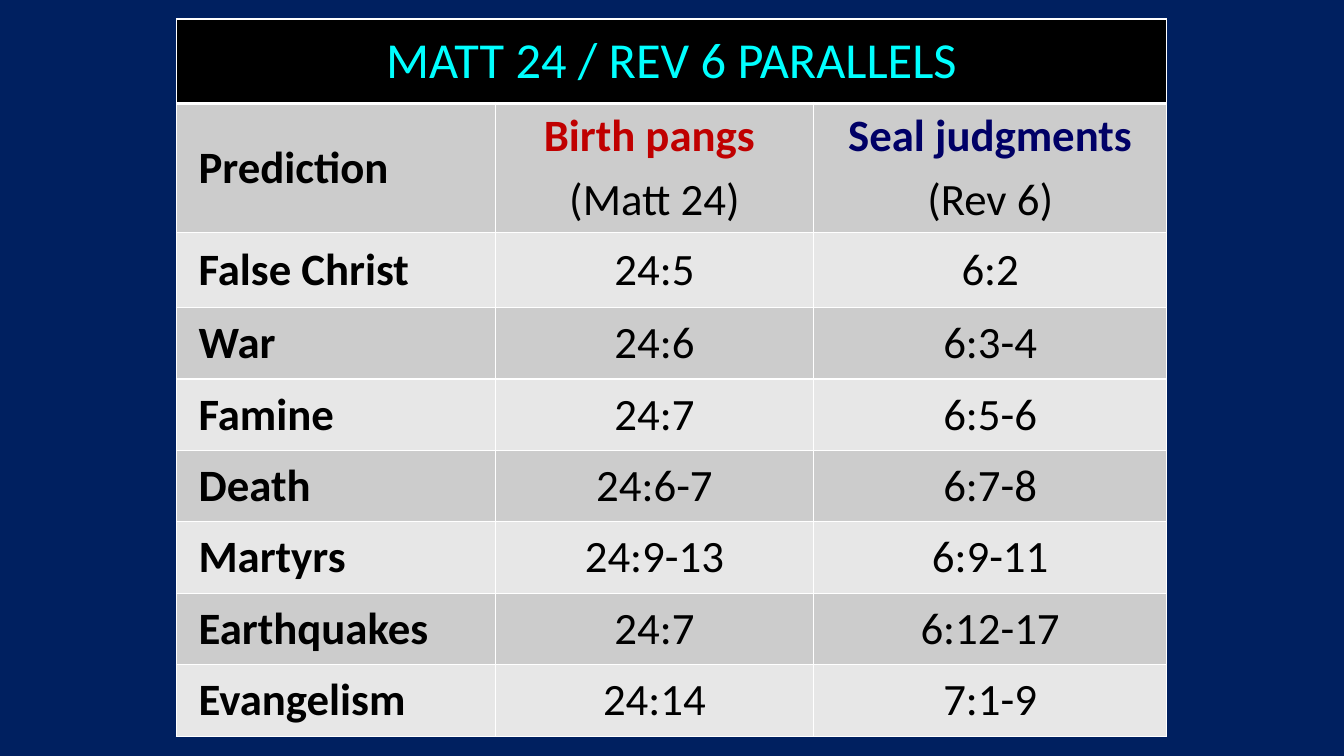
from lxml import etree
from pptx import Presentation
from pptx.dml.color import RGBColor
from pptx.enum.text import MSO_ANCHOR, PP_ALIGN
from pptx.oxml.ns import qn
from pptx.util import Cm, Pt

LEFT, CENTER = PP_ALIGN.LEFT, PP_ALIGN.CENTER
MIDDLE = MSO_ANCHOR.MIDDLE

TITLE = "MATT 24 / REV 6 PARALLELS"
HEADINGS = [
    [("Prediction", "000000")],
    [("Birth pangs ", "C00000"), ("(Matt 24)", "000000")],
    [("Seal judgments", "000066"), ("(Rev 6)", "000000")],
]
PARALLELS = [
    ("False Christ", "24:5", "6:2"),
    ("War", "24:6", "6:3-4"),
    ("Famine", "24:7", "6:5-6"),
    ("Death", "24:6-7", "6:7-8"),
    ("Martyrs", "24:9-13", "6:9-11"),
    ("Earthquakes", "24:7", "6:12-17"),
    ("Evangelism", "24:14", "7:1-9"),
]
COL_WIDTHS = [8.03, 8.03, 8.89]
ROW_HEIGHTS = [2.13, 3.22, 1.9] + [1.8] * 6
BANDS = ["E7E7E7", "CCCCCC"]


def rgb(color):
    return RGBColor.from_string(color)


def write(p, text, size=32, color="000000", bold=False, align=CENTER,
          indent=0, before=20):
    """Fill paragraph p; indent is in cm, before in percent of a line."""
    p.alignment = align
    pPr = p._p.get_or_add_pPr()
    pPr.set("marL", str(Cm(indent)))
    spacing = etree.SubElement(pPr, qn("a:spcBef"))
    etree.SubElement(spacing, qn("a:spcPct"), val=str(before * 1000))
    r = p.add_run()
    r.text = text
    r.font.name, r.font.size, r.font.bold = "Calibri", Pt(size), bold
    r.font.color.rgb = rgb(color)


prs = Presentation()
prs.slide_width, prs.slide_height = Cm(33.87), Cm(19.05)
s = prs.slides.add_slide(prs.slide_layouts[6])
s.background.fill.solid()
s.background.fill.fore_color.rgb = rgb("002060")

table = s.shapes.add_table(len(ROW_HEIGHTS), len(COL_WIDTHS), Cm(4.45), Cm(0.48),
                           Cm(sum(COL_WIDTHS)), Cm(sum(ROW_HEIGHTS))).table
for col, width in zip(table.columns, COL_WIDTHS):
    col.width = Cm(width)

# Row heights, borders and banded fills
for i, (row, height) in enumerate(zip(table.rows, ROW_HEIGHTS)):
    row.height = Cm(height)
    for cell in row.cells:
        cell.vertical_anchor = MIDDLE
        tcPr = cell._tc.get_or_add_tcPr()
        for side in "LRTB":
            below_title = (i, side) in [(0, "B"), (1, "T")]
            ln = etree.SubElement(tcPr, qn("a:ln" + side),
                                  w=str(Pt(3 if below_title else 1)))
            fill = etree.SubElement(ln, qn("a:solidFill"))
            etree.SubElement(fill, qn("a:srgbClr"), val="FFFFFF")
        cell.fill.solid()
        cell.fill.fore_color.rgb = rgb(BANDS[i % 2] if i else "000000")

# Title across all columns
title = table.cell(0, 0)
title.merge(table.cell(0, 2))
write(title.text_frame.paragraphs[0], TITLE, size=36, color="00FFFF", before=0)

# Column headings and the parallels; first column bold and indented
body = [HEADINGS] + [[[(text, "000000")] for text in row] for row in PARALLELS]
for i, row in enumerate(body, start=1):
    for j, lines in enumerate(row):
        tf = table.cell(i, j).text_frame
        for k, (text, color) in enumerate(lines):
            p = tf.add_paragraph() if k else tf.paragraphs[0]
            write(p, text, color=color, bold=j == 0 or (i == 1 and k == 0),
                  align=CENTER if j else LEFT, indent=0 if j else 0.3)

prs.save("out.pptx")
